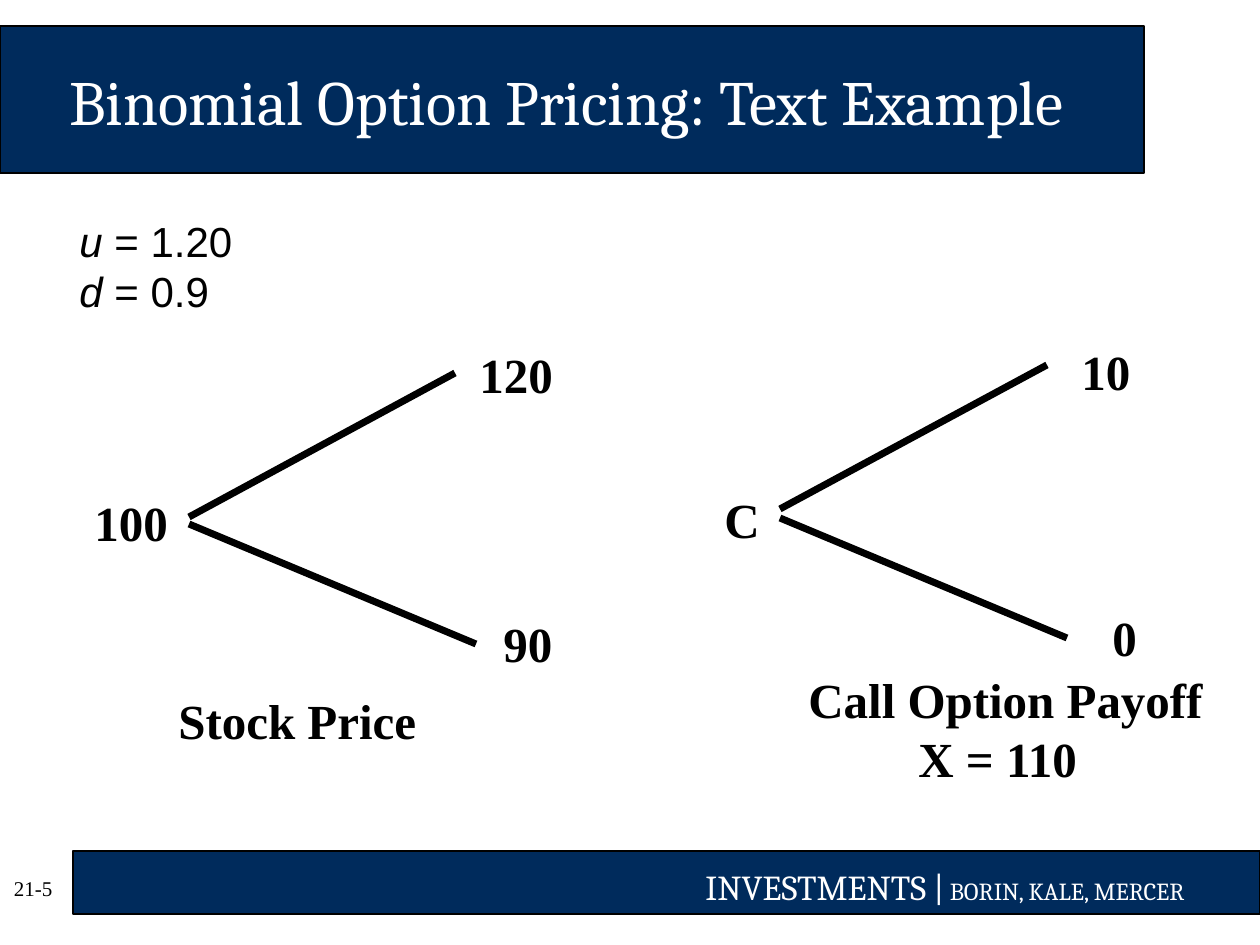
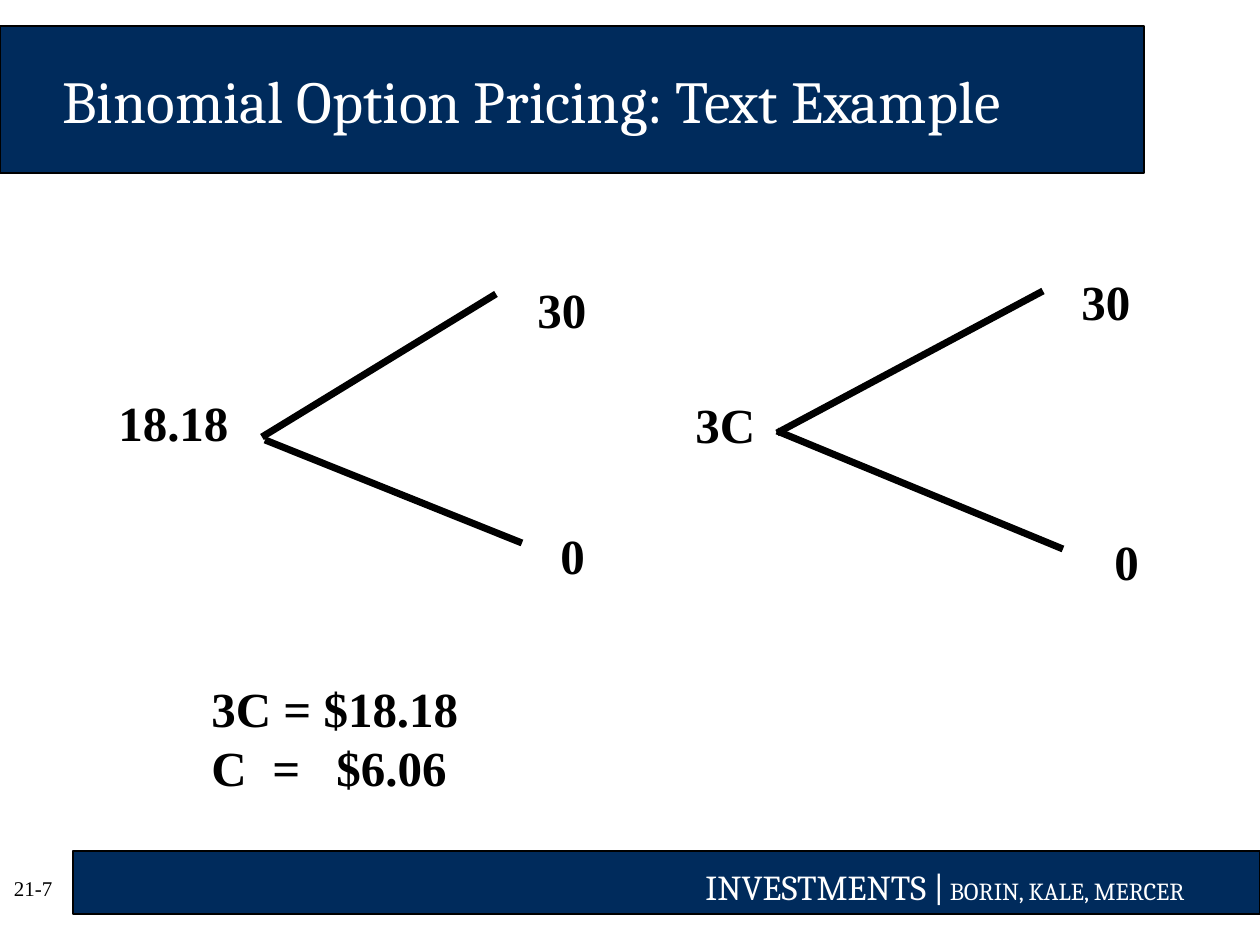
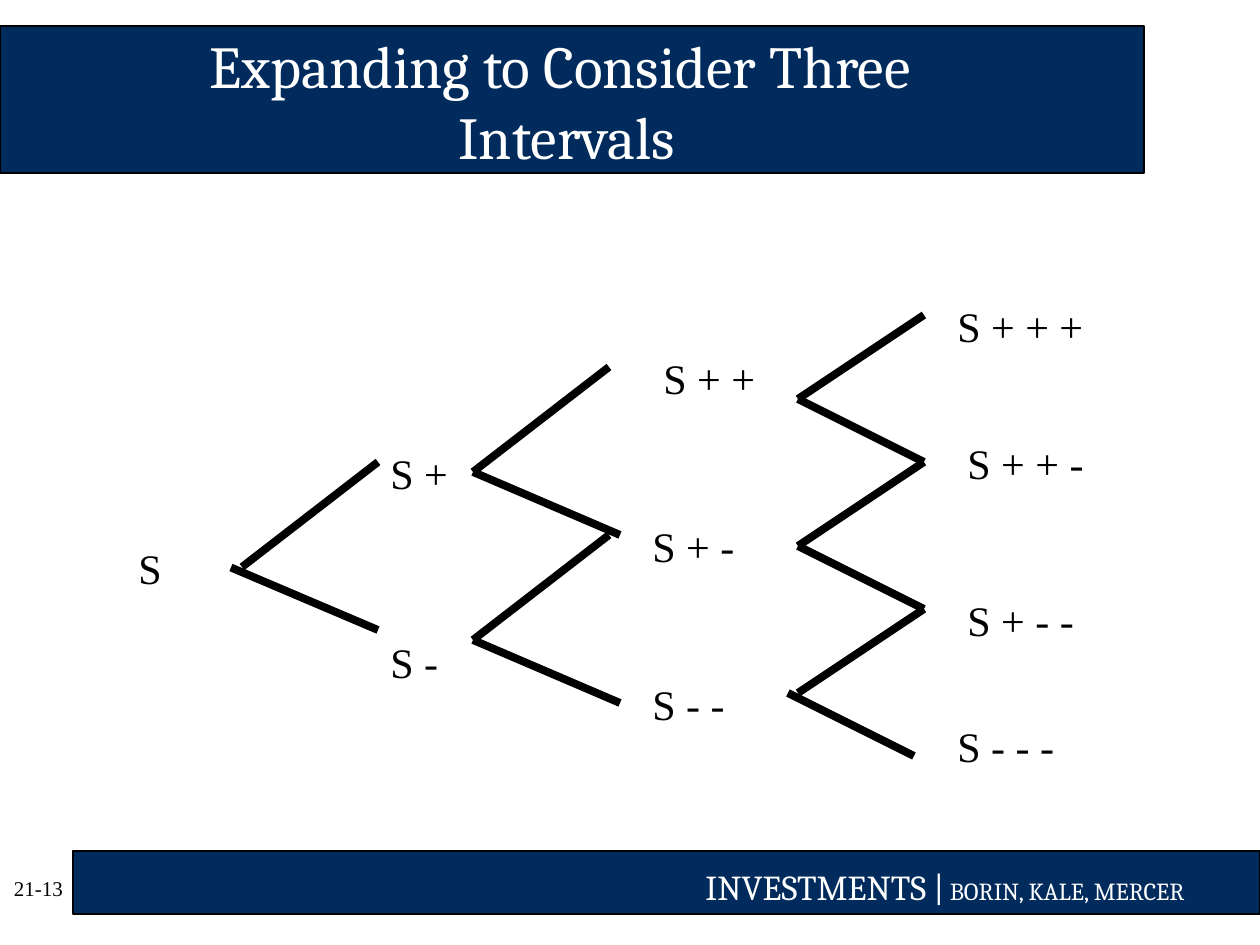
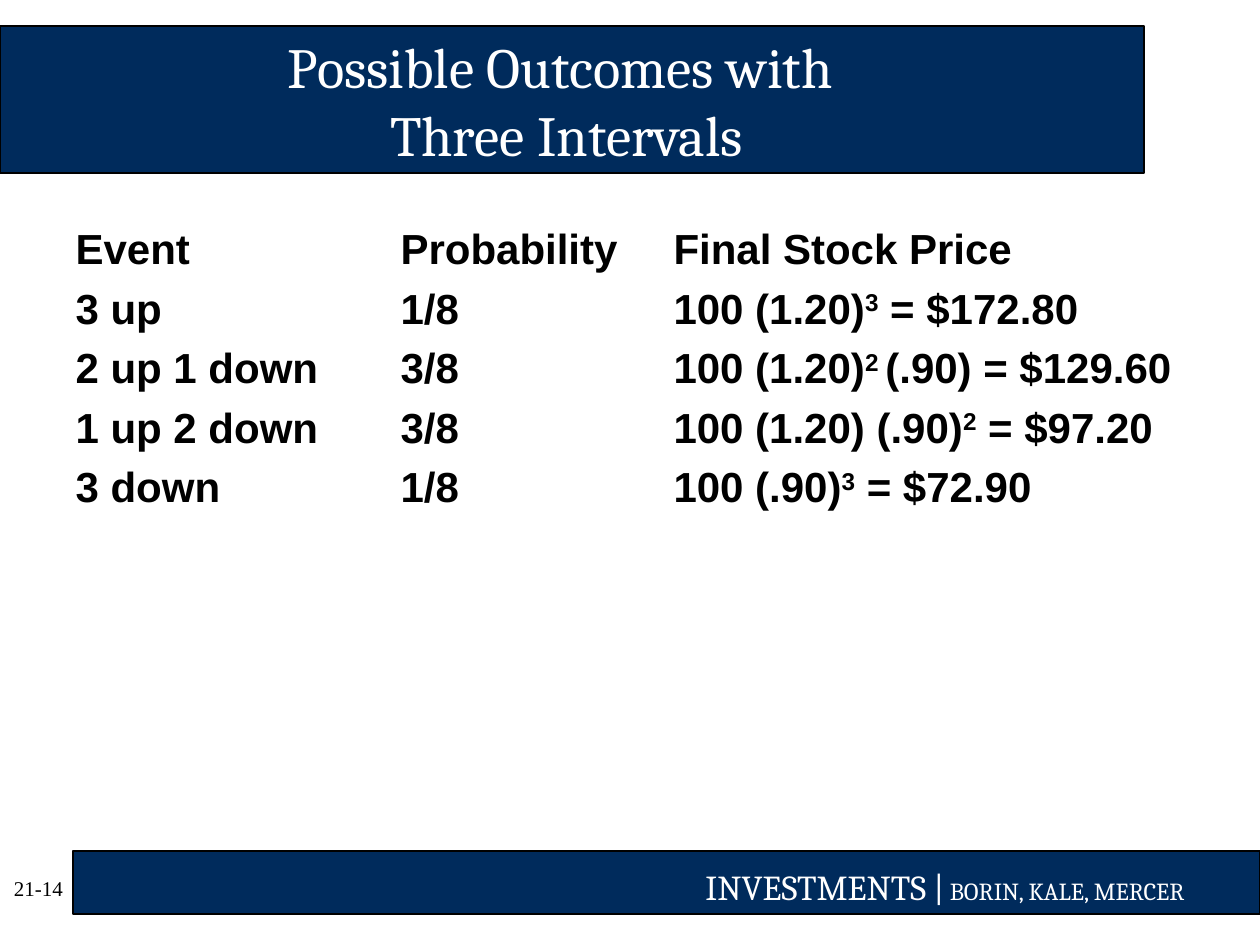
from pptx import Presentation
from pptx.dml.color import RGBColor
from pptx.enum.shapes import MSO_CONNECTOR, MSO_SHAPE
from pptx.enum.text import MSO_ANCHOR, PP_ALIGN
from pptx.oxml.ns import qn
from pptx.util import Pt
from lxml.etree import SubElement

PX = 914400 / 126
COLORS = {"navy": "002B5C", "black": "000000", "white": "FFFFFF"}
TITLE = {"name": "Cambria", "size": Pt(36), "color": "white"}
FOOTER = {"name": "Cambria", "size": Pt(20), "color": "white"}
NUMBER = {"name": "Times New Roman", "size": Pt(12), "color": "black"}
VALUE = {"name": "Times New Roman", "size": Pt(28), "color": "black", "bold": True}
STATE = {"name": "Times New Roman", "size": Pt(24), "color": "black"}
FACTOR = {"name": "Arial", "size": Pt(24), "color": "black"}
OUTCOME = {**FACTOR, "bold": True}


def px(length):
    """Turn px into EMU."""
    return round(length * PX)


def rgb(name):
    """Look up a named colour."""
    return RGBColor.from_string(COLORS[name])


def add_run(paragraph, text, style):
    """Append text, with any line breaks, in one style."""
    for index, line in enumerate(text.split("\n")):
        if index:
            paragraph.add_line_break()
        run = paragraph.add_run()
        run.text = line
        for key, value in style.items():
            if key == "color":
                run.font.color.rgb = rgb(value)
            elif key == "baseline":
                run._r.get_or_add_rPr().set("baseline", str(value))
            else:
                setattr(run.font, key, value)


def add_text(slide, box, paragraphs, style, **frame_format):
    """Add a text box; each paragraph is a list of (text, style changes)."""
    holder = slide.shapes.add_textbox(*map(px, box))
    frame = holder.text_frame
    for key, value in {"word_wrap": True, **frame_format}.items():
        setattr(frame, key, value)
    for index, runs in enumerate(paragraphs):
        paragraph = frame.add_paragraph() if index else frame.paragraphs[0]
        for text, changes in runs:
            add_run(paragraph, text, {**style, **changes})
    return holder


def add_label(slide, text, x, y, width, style=VALUE, height=71, wrap=False):
    """Add a label with one paragraph per line."""
    lines = [[(line, {})] for line in text.split("\n")]
    return add_text(slide, (x, y, width, height), lines, style, word_wrap=wrap)


def add_band(slide, *box):
    """Add a navy band with a thin black outline."""
    band = slide.shapes.add_shape(MSO_SHAPE.RECTANGLE, *map(px, box))
    band.shadow.inherit = False
    band.fill.solid()
    band.fill.fore_color.rgb = rgb("navy")
    band.line.color.rgb = rgb("black")
    band.line.width = Pt(0.75)


def add_branch(slide, ends, weight):
    """Draw one straight branch of a tree."""
    branch = slide.shapes.add_connector(MSO_CONNECTOR.STRAIGHT, *map(px, ends))
    branch.line.color.rgb = rgb("black")
    branch.line.width = Pt(weight)
    SubElement(branch._element.spPr, qn("a:effectLst"))
    return branch


def add_fork(slide, upper, lower, weight=4):
    """Draw the up and down branches and return the lower one."""
    add_branch(slide, upper, weight)
    return add_branch(slide, lower, weight)


def set_tabs(paragraph, *stops):
    """Give a paragraph left tab stops."""
    tabs = SubElement(paragraph._p.get_or_add_pPr(), qn("a:tabLst"))
    for stop in stops:
        SubElement(tabs, qn("a:tab"), pos=str(px(stop)), algn="l")


def add_base(deck, number, title, size, right=13):
    """Add a slide with its bands, number, footer and title."""
    slide = deck.slides.add_slide(deck.slide_layouts[6])
    add_band(slide, 0, 26, 1144, 147)
    insets = dict.fromkeys(
        ("margin_left", "margin_right", "margin_top", "margin_bottom"), px(6))
    add_text(slide, (8, 863, 221, 50), [[(number, {})]], NUMBER,
             vertical_anchor=MSO_ANCHOR.MIDDLE, **insets)
    add_band(slide, 73, 851, 1187, 63)
    add_text(slide, (693, 859, 567, 54), [[
        ("INVESTMENTS", {}), (" ", {"size": Pt(18), "color": "black"}),
        ("|", {}), (" BORIN, KALE, MERCER", {"size": Pt(14)})]], FOOTER)
    heading = add_text(slide, (0, 21, 1134, 158), [[(title, {"size": Pt(size)})]],
                       TITLE, vertical_anchor=MSO_ANCHOR.MIDDLE,
                       margin_right=px(right))
    heading.text_frame.paragraphs[0].alignment = PP_ALIGN.CENTER
    return slide


def build_payoffs(deck):
    """Build the stock price and call payoff trees."""
    slide = add_base(deck, "21-5", "Binomial Option Pricing: Text Example", 36)
    add_fork(slide, (189, 517, 455, 373), (189, 524, 476, 644))
    add_fork(slide, (780, 509, 1047, 365), (780, 518, 1067, 638))
    for label in (("100", 82, 486, 100), ("120", 467, 338, 100), ("90", 491, 607, 75),
                  ("Stock Price", 166, 684, 264), ("C", 712, 483, 61),
                  ("10", 1069, 335, 75), ("0", 1100, 601, 50)):
        add_label(slide, *label)
    payoff = add_label(slide, "Call Option Payoff\nX = 110", 796, 663, 425, height=131)
    strike = payoff.text_frame.paragraphs[1]
    strike._p.get_or_add_pPr().set("marL", str(px(110)))
    italic = {"italic": True}
    add_text(slide, (67, 209, 645, 115),
             [[("u ", italic), ("= 1.20", {})], [("d ", italic), ("= 0.9", {})]], FACTOR)


def build_replication(deck):
    """Build the matching trees and the solved call price."""
    slide = add_base(deck, "21-7", "Binomial Option Pricing: Text Example", 34, 83)
    add_fork(slide, (262, 437, 496, 294), (265, 440, 522, 543))
    add_fork(slide, (777, 433, 1043, 291), (777, 431, 1063, 549))
    for label in (("30", 525, 273, 75), ("0", 548, 519, 50), ("3C", 683, 388, 87),
                  ("30", 1069, 265, 75), ("0", 1102, 525, 50)):
        add_label(slide, *label)
    add_label(slide, "18.18", 106, 386, 165, wrap=True)
    solution = add_label(slide, "3C = $18.18\nC\t=\t$6.06", 199, 672, 273, height=130)
    set_tabs(solution.text_frame.paragraphs[1], 61, 125)


def build_intervals(deck):
    """Build the three-interval tree."""
    slide = add_base(deck, "21-13", "Expanding to Consider Three \nIntervals", 34)
    start = add_label(slide, "S", 126, 536, 105, STATE, 63, True)
    first_down = add_fork(slide, (242, 567, 378, 462), (231, 567, 378, 630), 4.5)
    first_down.begin_connect(start, 3)
    for y in (472, 640):
        add_fork(slide, (473, y, 609, y - 105), (473, y, 620, y + 63), 4.5)
    for y, shift in ((399, 0), (546, 0), (693, 10)):
        add_fork(slide, (798, y, 924, y - 84),
                 (798 - shift, y, 924 - shift, y + 63), 4.5)
    for text, x, y, width, wrap in (
            ("S +", 378, 441, 83, False), ("S -", 378, 630, 73, False),
            ("S + +", 651, 346, 126, True), ("S + -", 640, 514, 199, True),
            ("S - -", 640, 672, 136, True), ("S + + +", 945, 294, 189, True),
            ("S + + -", 955, 431, 141, False), ("S + - -", 955, 588, 132, False),
            ("S - - -", 945, 714, 122, False)):
        add_label(slide, text, x, y, width, STATE, 63, wrap)


def build_outcomes(deck):
    """Build the table of outcomes, with powers raised."""
    slide = add_base(deck, "21-14", "Possible Outcomes with \nThree Intervals", 32.4)
    rows = (("Event", "Probability", "Final Stock Price"),
            ("3 up", "1/8", "100 (1.20)^3^ = $172.80"),
            ("2 up 1 down", "3/8", "100 (1.20)^2 ^(.90) = $129.60"),
            ("1 up 2 down", "3/8", "100 (1.20) (.90)^2^ = $97.20"),
            ("3 down", "1/8", "100 (.90)^3^ = $72.90"))
    outcomes = slide.shapes.add_table(
        len(rows), 3, *map(px, (63, 220, 1134, 59 * len(rows)))).table
    outcomes.first_row = outcomes.horz_banding = False
    for column, width in zip(outcomes.columns, (325, 273, 536)):
        column.width = px(width)
    for row, texts in enumerate(rows):
        for column, text in enumerate(texts):
            cell = outcomes.cell(row, column)
            cell.fill.background()
            cell.margin_top, cell.margin_bottom = px(7), px(2)
            for index, part in enumerate(text.split("^")):
                power = {"baseline": 30000} if index % 2 else {}
                add_run(cell.text_frame.paragraphs[0], part, {**OUTCOME, **power})


def main():
    """Build and save the slides."""
    deck = Presentation()
    deck.slide_width, deck.slide_height = px(1260), px(945)
    for build in (build_payoffs, build_replication, build_intervals, build_outcomes):
        build(deck)
    deck.save("out.pptx")


if __name__ == "__main__":
    main()
